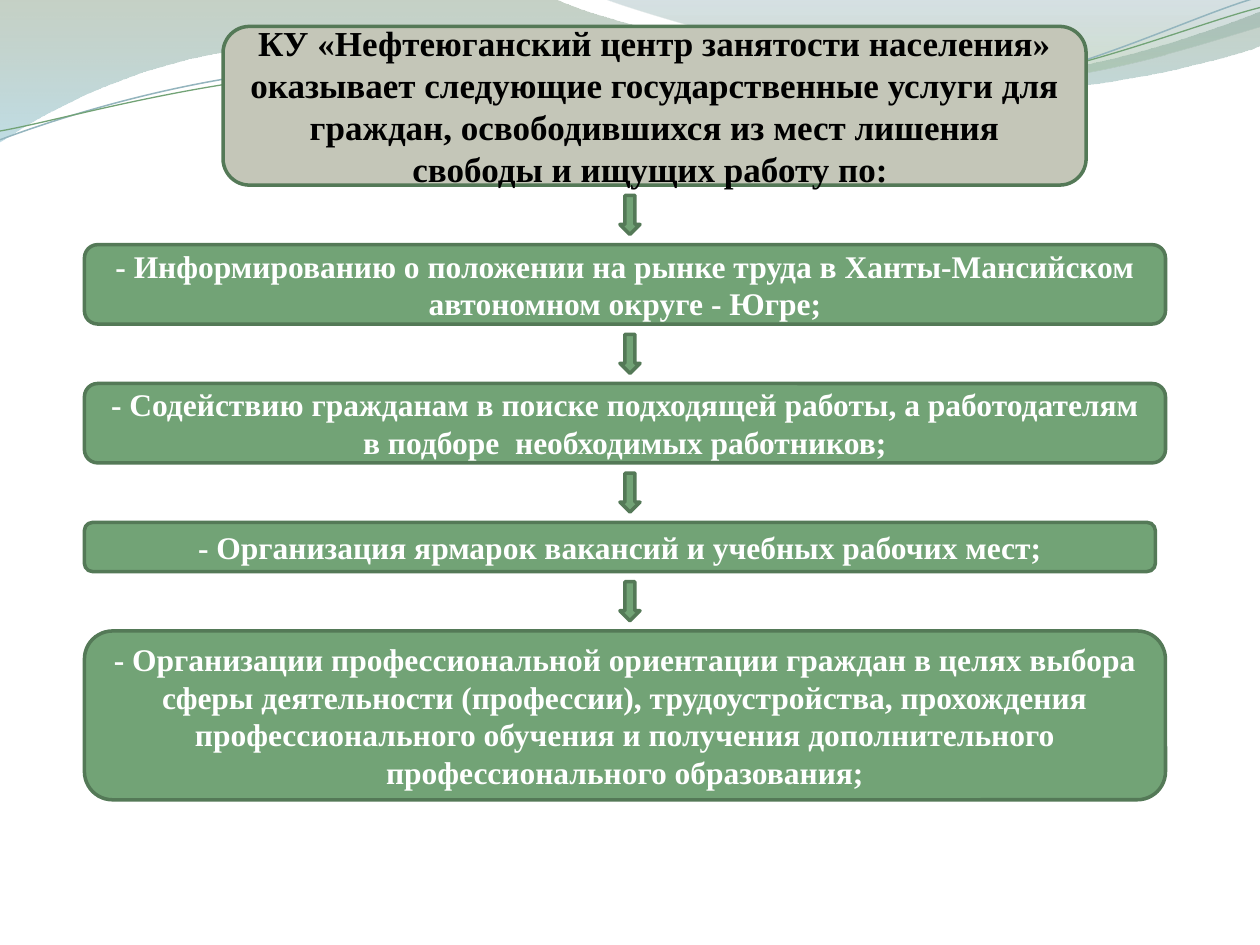
"""Build a one-slide flow of employment services under a wavy header."""
import dataclasses

import lxml.etree
import pptx
import pptx.dml.color
import pptx.enum.shapes
import pptx.enum.text
import pptx.oxml.ns
import pptx.util

CELL = pptx.util.Inches(0.1)
COLUMNS, ROWS = 100, 75
SHAPES = pptx.enum.shapes.MSO_SHAPE


@dataclasses.dataclass(frozen=True)
class Theme:
    """Colours, font and type sizes of the slide."""

    font: str = "Times New Roman"
    title_size: int = 20
    step_size: int = 18
    title_text: str = "000000"
    step_text: str = "FFFFFF"
    title_fill: str = "C4C6B8"
    step_fill: str = "72A376"
    outline: str = "547957"
    outline_width: float = 2
    left_wave: tuple = ((0, "809980", 45), (1, "8DC1CF", 55))
    right_wave: tuple = ((0, "779BA4", 30), (0.8, "96B996", 45))
    blue_strand: tuple = ("94B5BE", 0.85)
    green_strand: tuple = ("72A376", 0.75)


THEME = Theme()

LEFT_WAVE = [
    (0, 0), (44, -0.1), (47.6, 1.7, 66.4, 6.3, 75.8, 6.3),
    (85.3, 6.3, 95.8, 2.6, 100, 0.9), (100.1, 3.6),
    (98.3, 4.4, 87, 7.6, 74.6, 7.5), (62.2, 7.5, 38.2, 2.8, 25.7, 3.4),
    (12.9, 3.6, 4.6, 8.3, -0.1, 11.3),
]
RIGHT_WAVE = [
    (47.9, -0.1), (50.9, 1.1, 68.2, 6.2, 76.9, 6.5),
    (85.6, 6.9, 96.1, 3.2, 100, 2.1), (100, 0),
]
BLUE_STRAND = [
    (0, 11.1), (4.8, 9.3, 15.8, 5.7, 27.7, 5.2),
    (39.5, 4.7, 59.3, 8.9, 71.3, 8), (83.3, 7.1, 93.8, 1.5, 99.8, -0.2),
]
GREEN_STRAND = [
    (0, 10.4), (4.7, 9.6, 16.4, 6.1, 28.3, 5.6),
    (40.3, 5.1, 59.7, 8.4, 71.7, 7.5), (83.6, 6.7, 94.1, 2.1, 100, 0.6),
]

TITLE = (
    "КУ «Нефтеюганский центр занятости населения» оказывает следующие "
    "государственные услуги для граждан, освободившихся из мест лишения "
    "свободы и ищущих работу по: "
)
TITLE_BOX = (17.7, 2.1, 68.5, 12.6)
STEP_LEFT = 6.7
STEPS = [
    (85.8, 6.3, "- Информированию о положении на рынке труда в "
                "Ханты-Мансийском автономном округе - Югре;"),
    (85.8, 6.3, "- Содействию гражданам в поиске подходящей работы, а "
                "работодателям в подборе  необходимых работников;"),
    (85, 3.9, "- Организация ярмарок вакансий и учебных рабочих мест;"),
    (85.8, 13.4, "- Организации профессиональной ориентации граждан в целях "
                 "выбора сферы деятельности (профессии), трудоустройства, "
                 "прохождения профессионального обучения и получения "
                 "дополнительного профессионального образования;"),
]
ARROW_LEFT, ARROW_WIDTH, ARROW_HEIGHT = 49.2, 1.6, 3.1
GAP = 0.81


def cells(*values):
    """Turn grid cells into slide lengths."""
    return [pptx.util.Emu(round(value * CELL)) for value in values]


def color(value):
    """Return an RGB colour from its hexadecimal form."""
    return pptx.dml.color.RGBColor.from_string(value)


def bend(shape, segments):
    """Join the three points of each cubic segment into one curve."""
    lines = iter(list(shape.element.spPr.iter(pptx.oxml.ns.qn("a:lnTo"))))
    for segment in segments:
        first = next(lines)
        if len(segment) == 6:
            first.tag = pptx.oxml.ns.qn("a:cubicBezTo")
            for line in (next(lines), next(lines)):
                first.append(line[0])
                line.getparent().remove(line)


def add_outline(slide, outline, close):
    """Add a freeform that follows straight and cubic segments."""
    start, *segments = outline
    points = [
        cells(*segment[index:index + 2])
        for segment in segments for index in range(0, len(segment), 2)
    ]
    builder = slide.shapes.build_freeform(*cells(*start))
    builder.add_line_segments(points, close=close)
    shape = builder.convert_to_shape()
    bend(shape, segments)
    shape.shadow.inherit = False
    return shape


def add_wave(slide, outline, stops):
    """Add a closed wave with a translucent downward gradient."""
    shape = add_outline(slide, outline, close=True)
    shape.line.fill.background()
    shape.fill.gradient()
    shape.fill.gradient_angle = 270
    for stop, (position, value, _) in zip(shape.fill.gradient_stops, stops):
        stop.position = position
        stop.color.rgb = color(value)
    tag = pptx.oxml.ns.qn("a:srgbClr")
    for element, (_, _, opacity) in zip(shape.element.spPr.iter(tag), stops):
        alpha = lxml.etree.SubElement(element, pptx.oxml.ns.qn("a:alpha"))
        alpha.set("val", str(opacity * 1000))


def add_strand(slide, outline, style):
    """Add a thin open curve."""
    shape = add_outline(slide, outline, close=False)
    shape.fill.background()
    shape.line.color.rgb = color(style[0])
    shape.line.width = pptx.util.Pt(style[1])


def add_block(slide, kind, box, fill):
    """Add a filled preset shape with the common outline."""
    shape = slide.shapes.add_shape(kind, *cells(*box))
    shape.shadow.inherit = False
    shape.fill.solid()
    shape.fill.fore_color.rgb = color(fill)
    shape.line.color.rgb = color(THEME.outline)
    shape.line.width = pptx.util.Pt(THEME.outline_width)
    return shape


def add_text_block(slide, box, fill, text, size, text_color):
    """Add a rounded block with one centred bold paragraph."""
    shape = add_block(slide, SHAPES.ROUNDED_RECTANGLE, box, fill)
    frame = shape.text_frame
    frame.word_wrap = True
    frame.vertical_anchor = pptx.enum.text.MSO_ANCHOR.MIDDLE
    paragraph = frame.paragraphs[0]
    paragraph.alignment = pptx.enum.text.PP_ALIGN.CENTER
    run = paragraph.add_run()
    run.text = text
    run.font.name = THEME.font
    run.font.size = pptx.util.Pt(size)
    run.font.bold = True
    run.font.color.rgb = color(text_color)


def add_steps(slide):
    """Stack the services, each below its arrow."""
    top = TITLE_BOX[1] + TITLE_BOX[3] + GAP
    for width, height, text in STEPS:
        arrow_box = (ARROW_LEFT, top, ARROW_WIDTH, ARROW_HEIGHT)
        add_block(slide, SHAPES.DOWN_ARROW, arrow_box, THEME.step_fill)
        top += ARROW_HEIGHT + GAP
        add_text_block(slide, (STEP_LEFT, top, width, height), THEME.step_fill,
                       text, THEME.step_size, THEME.step_text)
        top += height + GAP


def main():
    """Build and save the presentation."""
    presentation = pptx.Presentation()
    presentation.slide_width, presentation.slide_height = cells(COLUMNS, ROWS)
    slide = presentation.slides.add_slide(
        presentation.slide_layouts.get_by_name("Blank"))
    add_wave(slide, LEFT_WAVE, THEME.left_wave)
    add_wave(slide, RIGHT_WAVE, THEME.right_wave)
    add_strand(slide, BLUE_STRAND, THEME.blue_strand)
    add_strand(slide, GREEN_STRAND, THEME.green_strand)
    add_text_block(slide, TITLE_BOX, THEME.title_fill,
                   TITLE, THEME.title_size, THEME.title_text)
    add_steps(slide)
    presentation.save("out.pptx")


if __name__ == "__main__":
    main()
